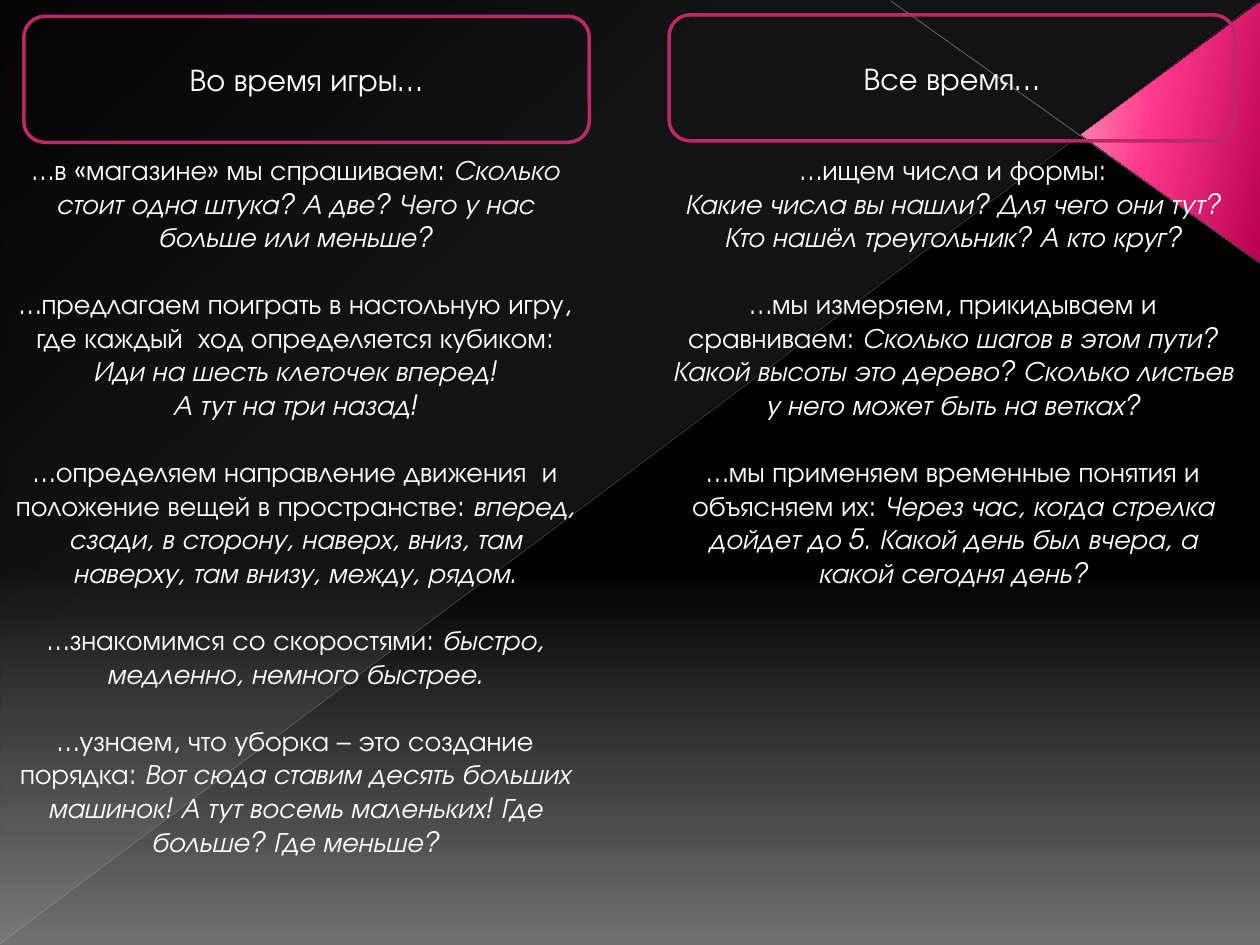
from lxml import etree
from pptx import Presentation
from pptx.dml.color import RGBColor
from pptx.enum.shapes import MSO_CONNECTOR, MSO_SHAPE
from pptx.enum.text import MSO_ANCHOR, MSO_AUTO_SIZE, PP_ALIGN
from pptx.oxml.ns import qn
from pptx.util import Cm, Pt

FONT = "TeX Gyre Adventor"
HEX = {
    "black": "000000", "grey": "707070", "mist": "D2D2D2",
    "wine": "B8014E", "pink": "FF388C", "blush": "FF9CB9",
    "frame": "BD2968", "ray": "C6C6C6", "edge": "BFBFBF", "text": "FFFFFF",
}


def paint(fill, root, stops, angle):
    """Fill with a gradient of (percent, colour, opacity) stops, angle clockwise."""
    fill.gradient()
    fill.gradient_angle = 360 - angle
    bands = root.find(".//" + qn("a:gsLst"))
    for old in list(bands):
        bands.remove(old)
    for place, name, alpha in stops:
        stop = etree.SubElement(bands, qn("a:gs"), pos=str(place * 1000))
        tint = etree.SubElement(stop, qn("a:srgbClr"), val=HEX[name])
        if alpha < 100:
            etree.SubElement(tint, qn("a:alpha"), val=str(alpha * 1000))


def style(run, size, slant=False):
    run.font.name = FONT
    run.font.size = Pt(size)
    run.font.italic = slant
    run.font.color.rgb = RGBColor.from_string(HEX["text"])


deck = Presentation()
deck.slide_width, deck.slide_height = Cm(25.4), Cm(19.05)
slide = deck.slides.add_slide(deck.slide_layouts[6])
shapes = slide.shapes
paint(slide.background.fill, slide.element,
      [(0, "black", 100), (60, "black", 100), (100, "grey", 100)], 90)

# Backdrop: a faint half-slide triangle and a pink wedge
backdrop = [
    (MSO_SHAPE.RIGHT_TRIANGLE, (0.02, 0.02, 25.35, 19), 0, 133,
     [(0, "mist", 10), (70, "mist", 8), (100, "mist", 1)]),
    (MSO_SHAPE.ISOSCELES_TRIANGLE, (20.98, 0.86, 5.26, 3.61), 90, 258,
     [(0, "wine", 100), (60, "pink", 100), (100, "blush", 100)]),
]
for kind, box, turn, angle, stops in backdrop:
    shape = shapes.add_shape(kind, *map(Cm, box))
    shape.shadow.inherit = False
    shape.rotation = turn
    shape.element.spPr.find(qn("a:xfrm")).set("flipV", "1")
    if kind == MSO_SHAPE.ISOSCELES_TRIANGLE:
        shape.adjustments[0] = 0.51
    paint(shape.fill, shape.element, stops, angle)
    shape.line.fill.background()

rays = [
    ((25.4, 5.31, 17.96, 0.02), "ray", 0.47, 45),
    ((0, 19.02, 25.37, 0.02), "edge", 0.39, 35),
]
for ends, name, width, alpha in rays:
    ray = shapes.add_connector(MSO_CONNECTOR.STRAIGHT, *map(Cm, ends))
    ray.line.width = Pt(width)
    ray.line.color.rgb = RGBColor.from_string(HEX[name])
    tint = ray.element.spPr.find(".//" + qn("a:srgbClr"))
    etree.SubElement(tint, qn("a:alpha"), val=str(alpha * 1000))
    etree.SubElement(ray.element.spPr, qn("a:effectLst"))

# Headings
for text, left, top in [("Во время игры…", 0.48, 0.33), ("Все время…", 13.49, 0.3)]:
    head = shapes.add_shape(MSO_SHAPE.ROUNDED_RECTANGLE,
                            Cm(left), Cm(top), Cm(11.4), Cm(2.54))
    head.shadow.inherit = False
    head.fill.background()
    head.line.color.rgb = RGBColor.from_string(HEX["frame"])
    head.line.width = Pt(2)
    frame = head.text_frame
    frame.text = text
    frame.vertical_anchor = MSO_ANCHOR.MIDDLE
    frame.paragraphs[0].alignment = PP_ALIGN.CENTER
    style(frame.paragraphs[0].runs[0], 18)

# Columns: each paragraph is an upright part and a slanted part
play = [
    ("…в «магазине» мы спрашиваем: ",
     "Сколько стоит одна штука? А две? Чего у нас больше или меньше?"),
    ("…предлагаем поиграть в настольную игру, где каждый  ход определяется кубиком:", ""),
    ("", "Иди на шесть клеточек вперед!"),
    ("", "А тут на три назад!"),
    ("…определяем направление движения  и положение вещей в пространстве: ",
     "вперед, сзади, в сторону, наверх, вниз, там наверху, там внизу, между, рядом."),
    ("…знакомимся со скоростями: ", "быстро, медленно, немного быстрее."),
    ("…узнаем, что уборка – это создание порядка: ",
     "Вот сюда ставим десять больших машинок! А тут восемь маленьких! "
     "Где больше? Где меньше?"),
]
always = [
    ("…ищем числа и формы:", ""),
    ("", "Какие числа вы нашли? Для чего они тут? Кто нашёл треугольник? А кто круг?"),
    ("…мы измеряем, прикидываем и сравниваем: ",
     "Сколько шагов в этом пути? Какой высоты это дерево? "
     "Сколько листьев у него может быть на ветках?"),
    ("…мы применяем временные понятия и объясняем их: ",
     "Через час, когда стрелка дойдет до 5. Какой день был вчера, а какой сегодня день?"),
]
for items, left, height in [(play, 0, 17.35), (always, 13.26, 11.2)]:
    frame = shapes.add_textbox(Cm(left), Cm(2.95), Cm(11.91), Cm(height)).text_frame
    frame.word_wrap = True
    frame.auto_size = MSO_AUTO_SIZE.SHAPE_TO_FIT_TEXT
    for i, (plain, slanted) in enumerate(items):
        para = frame.add_paragraph() if i else frame.paragraphs[0]
        para.alignment = PP_ALIGN.CENTER
        if i and plain:
            para.space_before = Pt(19.2)
        for text, slant in [(plain, False), (slanted, True)]:
            if text:
                run = para.add_run()
                run.text = text
                style(run, 16, slant)

deck.save("out.pptx")
